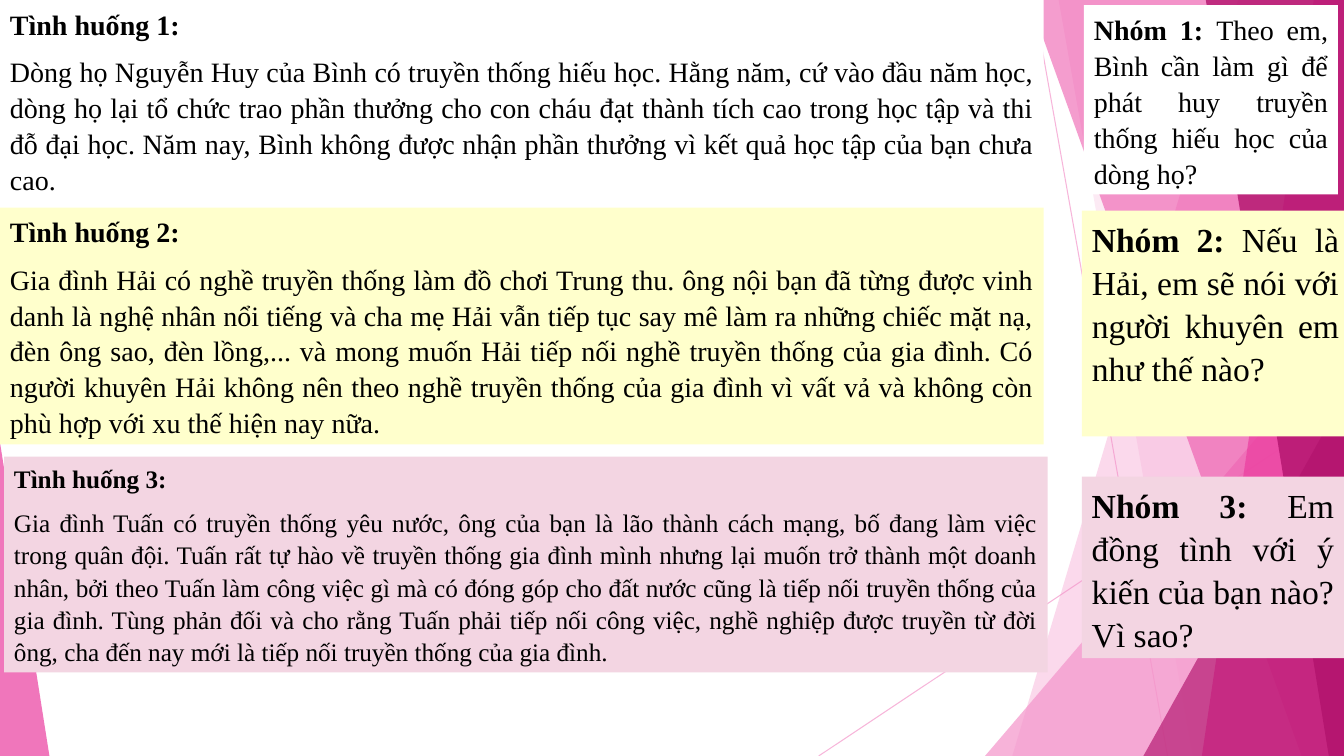
"""Build a slide of three family-tradition situations and their group questions."""
from dataclasses import dataclass

from lxml import etree
from pptx import Presentation
from pptx.dml.color import RGBColor
from pptx.enum.shapes import MSO_CONNECTOR, MSO_SHAPE
from pptx.enum.text import MSO_ANCHOR, PP_ALIGN
from pptx.oxml.ns import qn
from pptx.util import Inches, Pt

COLORS = {
    "light": "F496CB",
    "pink": "EB3D9F",
    "dark": "B2136D",
    "white": "FFFFFF",
    "yellow": "FFFFCC",
    "rose": "F3D5E2",
    "black": "000000",
}
FONT = "Times New Roman"
WIDTH, HEIGHT = 13.33, 7.5


@dataclass
class Ray:
    """A thin line between two points."""
    start: tuple[float, float]
    end: tuple[float, float]


@dataclass
class Band:
    """A translucent panel running from a slanted edge to the right side."""
    top: float
    bottom: float
    color: str
    alpha: int


@dataclass
class Corner:
    """A translucent right triangle standing on the bottom edge."""
    left: float
    top: float
    width: float
    apex: float
    color: str
    alpha: int


@dataclass
class Card:
    """A filled text box with a bold heading and a body."""
    box: tuple[float, float, float, float]
    color: str
    size: int
    heading: str
    body: str
    inline: bool = False


RAYS = [Ray((10.25, 0), (11.58, HEIGHT)), Ray((WIDTH, 4.03), (8.12, HEIGHT))]

FACETS = [
    Band(12.28, 10.04, "light", 36),
    Band(10.5, 11.83, "light", 20),
    Corner(9.77, 3.33, 3.56, 1, "light", 72),
    Band(10.21, 12.91, "pink", 50),
    Band(13.03, 11.92, "pink", 70),
    Band(11.96, 13.18, "dark", 80),
    Corner(11.34, 3.93, 1.99, 1, "dark", 66),
    Corner(0, 4.39, 0.49, 0, "pink", 70),
]

CARDS = [
    Card((10.73, 4.73, 2.6, 1.8), "rose", 24, "Nhóm 3: ",
         "Em đồng tình với ý kiến của bạn nào? Vì sao?", True),
    Card((0, 0, 10.35, 1.99), "white", 20, "Tình huống 1:",
         "Dòng họ Nguyễn Huy của Bình có truyền thống hiếu học. Hằng năm, cứ vào "
         "đầu năm học, dòng họ lại tổ chức trao phần thưởng cho con cháu đạt thành "
         "tích cao trong học tập và thi đỗ đại học. Năm nay, Bình không được nhận "
         "phần thưởng vì kết quả học tập của bạn chưa cao."),
    Card((10.75, 0.05, 2.52, 1.88), "white", 20, "Nhóm 1: ",
         "Theo em, Bình cần làm gì để phát huy truyền thống hiếu học của dòng họ?",
         True),
    Card((10.73, 2.09, 2.65, 2.24), "yellow", 24, "Nhóm 2: ",
         "Nếu là Hải, em sẽ nói với người khuyên em như thế nào?", True),
    Card((0, 2.06, 10.35, 2.35), "yellow", 20, "Tình huống 2:",
         "Gia đình Hải có nghề truyền thống làm đồ chơi Trung thu. ông nội bạn đã "
         "từng được vinh danh là nghệ nhân nổi tiếng và cha mẹ Hải vẫn tiếp tục say "
         "mê làm ra những chiếc mặt nạ, đèn ông sao, đèn lồng,... và mong muốn Hải "
         "tiếp nối nghề truyền thống của gia đình. Có người khuyên Hải không nên theo "
         "nghề truyền thống của gia đình vì vất vả và không còn phù hợp với xu thế "
         "hiện nay nữa."),
    Card((0.04, 4.53, 10.35, 2.14), "rose", 18, "Tình huống 3:",
         "Gia đình Tuấn có truyền thống yêu nước, ông của bạn là lão thành cách mạng, "
         "bố đang làm việc trong quân đội. Tuấn rất tự hào về truyền thống gia đình "
         "mình nhưng lại muốn trở thành một doanh nhân, bởi theo Tuấn làm công việc "
         "gì mà có đóng góp cho đất nước cũng là tiếp nối truyền thống của gia đình. "
         "Tùng phản đối và cho rằng Tuấn phải tiếp nối công việc, nghề nghiệp được "
         "truyền từ đời ông, cha đến nay mới là tiếp nối truyền thống của gia đình."),
]


def rgb(name: str) -> RGBColor:
    return RGBColor.from_string(COLORS[name])


def set_alpha(sp, percent: int) -> None:
    for clr in sp._element.spPr.iter(qn("a:srgbClr")):
        etree.SubElement(clr, qn("a:alpha"), val=str(percent * 1000))


def draw_ray(s, ray: Ray) -> None:
    ends = [Inches(v) for v in ray.start + ray.end]
    sp = s.shapes.add_connector(MSO_CONNECTOR.STRAIGHT, *ends)
    sp.line.color.rgb = rgb("light")
    sp.line.width = Pt(0.75)
    set_alpha(sp, 70)
    etree.SubElement(sp._element.spPr, qn("a:effectLst"))


def draw_facet(s, facet: Band | Corner) -> None:
    if isinstance(facet, Band):
        points = [(facet.top, 0), (WIDTH, 0), (WIDTH, HEIGHT), (facet.bottom, HEIGHT)]
        first, *rest = [(Inches(x), Inches(y)) for x, y in points]
        builder = s.shapes.build_freeform(*first)
        builder.add_line_segments(rest, close=True)
        sp = builder.convert_to_shape()
    else:
        box = (facet.left, facet.top, facet.width, HEIGHT - facet.top)
        sp = s.shapes.add_shape(MSO_SHAPE.ISOSCELES_TRIANGLE, *map(Inches, box))
        sp.adjustments[0] = facet.apex
    sp.shadow.inherit = False
    sp.fill.solid()
    sp.fill.fore_color.rgb = rgb(facet.color)
    sp.line.fill.background()
    set_alpha(sp, facet.alpha)


def draw_card(s, card: Card) -> None:
    sp = s.shapes.add_textbox(*map(Inches, card.box))
    sp.fill.solid()
    sp.fill.fore_color.rgb = rgb(card.color)
    tf = sp.text_frame
    tf.word_wrap = True
    tf.vertical_anchor = MSO_ANCHOR.TOP
    p = tf.paragraphs[0]
    p.text = card.heading
    if card.inline:
        p.add_run().text = card.body
    else:
        tf.add_paragraph().text = card.body
    for p in tf.paragraphs:
        p.alignment = PP_ALIGN.JUSTIFY
        p.line_spacing = 1.07
        p.space_after = Pt(8)
        for r in p.runs:
            r.font.name = FONT
            r.font.size = Pt(card.size)
            r.font.bold = r.text == card.heading
            r.font.color.rgb = rgb("black")


def main() -> None:
    prs = Presentation()
    prs.slide_width, prs.slide_height = Inches(WIDTH), Inches(HEIGHT)
    s = prs.slides.add_slide(prs.slide_layouts[6])
    for ray in RAYS:
        draw_ray(s, ray)
    for facet in FACETS:
        draw_facet(s, facet)
    for card in CARDS:
        draw_card(s, card)
    prs.save("out.pptx")


if __name__ == "__main__":
    main()
